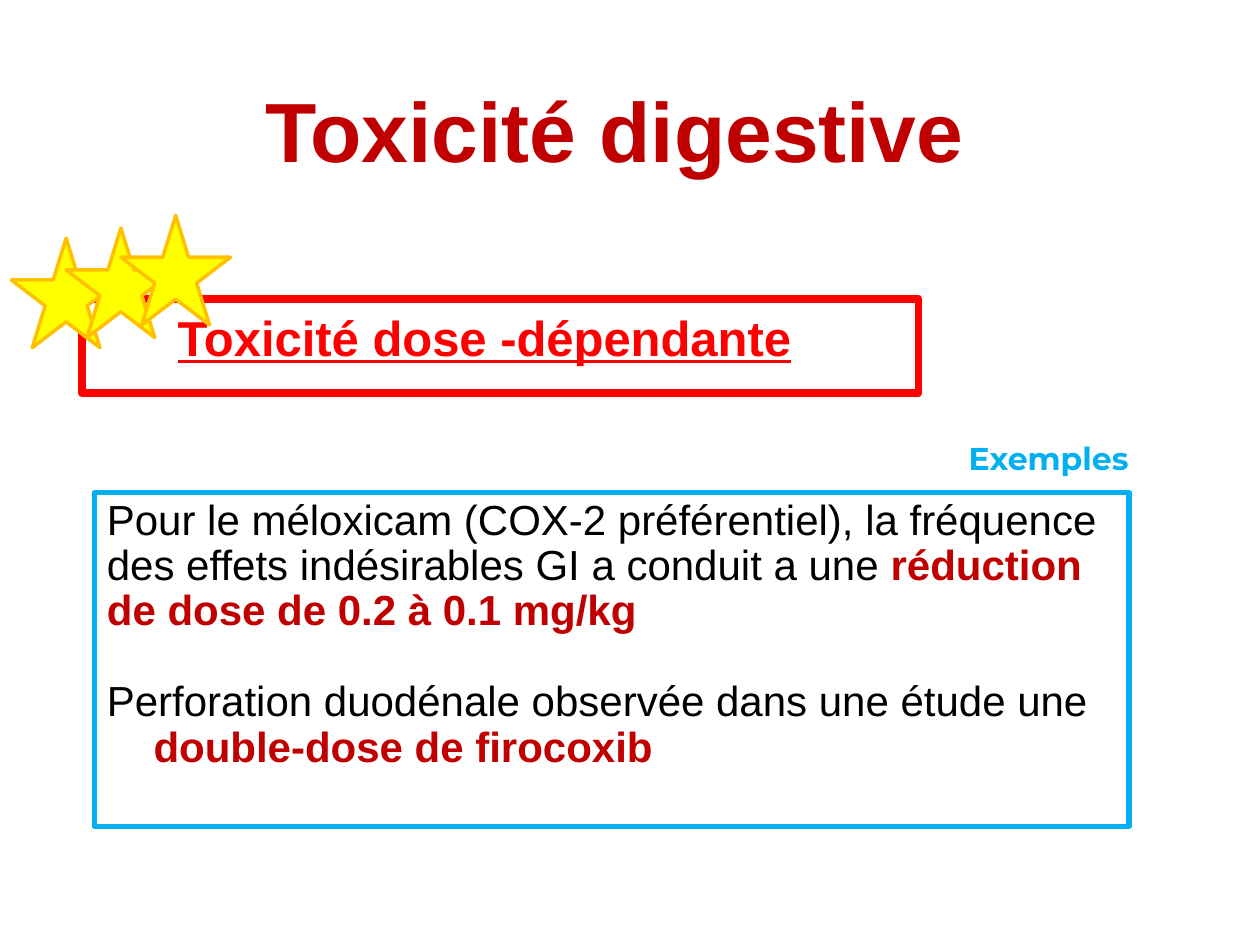
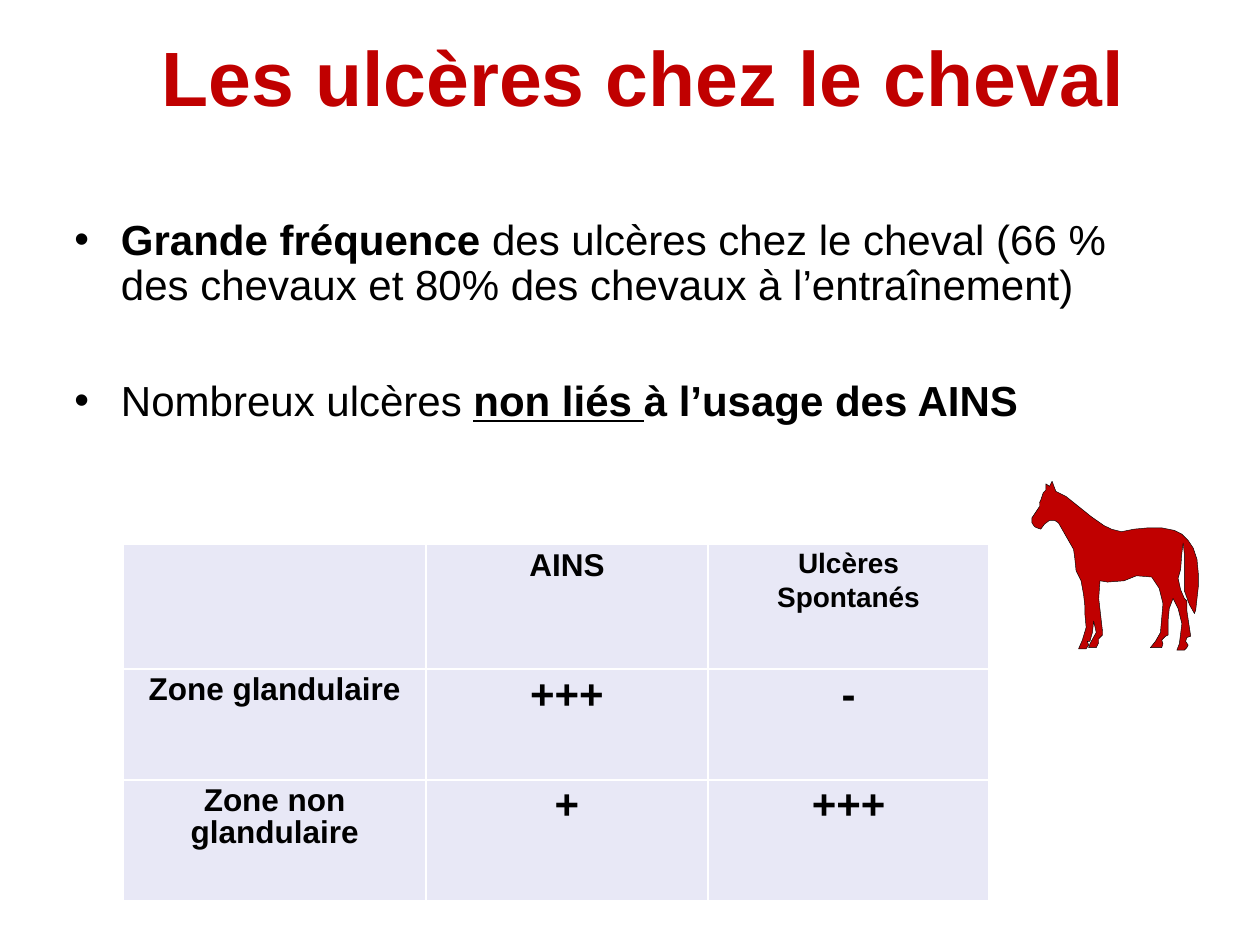
from dataclasses import dataclass

from lxml import etree
from pptx import Presentation
from pptx.dml.color import RGBColor
from pptx.enum.shapes import MSO_SHAPE
from pptx.enum.text import MSO_ANCHOR, MSO_AUTO_SIZE, PP_ALIGN
from pptx.oxml.ns import qn
from pptx.util import Inches, Pt

RECT, STAR = MSO_SHAPE.RECTANGLE, MSO_SHAPE.STAR_5_POINT
LEFT, MID = PP_ALIGN.LEFT, PP_ALIGN.CENTER
TOP, CENTRE = MSO_ANCHOR.TOP, MSO_ANCHOR.MIDDLE
FIXED = MSO_AUTO_SIZE.NONE


@dataclass(frozen=True)
class Theme:
    """Colours, fonts and type sizes shared by the slides."""

    font: str = "Arial"
    accent: str = "Montserrat"
    dark: str = "C00000"
    red: str = "FF0000"
    blue: str = "00B0F0"
    gold: str = "FFC000"
    yellow: str = "FFFF00"
    pale: str = "E8E8F6"
    black: str = "000000"
    white: str = "FFFFFF"
    body: int = 24
    lead: int = 28
    label: int = 18
    small: int = 16
    pitch: float = 0.9
    hang: float = 0.37


T = Theme()
STRONG = {"bold": True, "color": T.dark}

HORSE = [
    (8, 39), (5, 38), (3, 37), (1, 34), (1, 30), (7, 21), (7, 18), (8, 16),
    (9, 13), (10, 10), (12, 8), (12, 3), (15, 5), (17, 1), (20, 9), (28, 13),
    (48, 29), (58, 36), (64, 39), (72, 41), (82, 39), (93, 38), (104, 38),
    (114, 40), (120, 43), (125, 48), (129, 54), (132, 63), (133, 74),
    (133, 85), (131, 103), (130, 106), (126, 99), (122, 88), (122, 73),
    (122, 59), (121, 50), (120, 58), (119, 71), (117, 78), (119, 87),
    (122, 94), (124, 96), (124, 104), (127, 124), (124, 125), (123, 128),
    (125, 131), (124, 133), (122, 135), (116, 135), (118, 130), (120, 114),
    (117, 102), (113, 94), (110, 102), (109, 112), (109, 123), (107, 124),
    (104, 127), (105, 130), (104, 133), (99, 133), (95, 133), (99, 128),
    (103, 121), (105, 98), (102, 86), (96, 77), (84, 76), (74, 80), (61, 81),
    (55, 80), (54, 94), (57, 120), (57, 123), (54, 126), (54, 129), (52, 133),
    (46, 133), (47, 130), (52, 121), (50, 112), (49, 121), (47, 128),
    (45, 128), (46, 131), (44, 134), (38, 134), (41, 127), (44, 117),
    (43, 106), (43, 100), (42, 91), (40, 80), (36, 72), (35, 62), (34, 55),
    (22, 34), (19, 32), (15, 32), (11, 35),
]


def tint(code):
    """Turn a hex code into a colour."""
    return RGBColor.from_string(code)


def place(shape, box):
    """Move and size a shape to a box in inches."""
    shape.left, shape.top, shape.width, shape.height = map(Inches, box)


def style(shape, fill=None, line=None, width=1):
    """Set fill and line of a shape and drop its shadow."""
    shape.shadow.inherit = False
    if fill:
        shape.fill.solid()
        shape.fill.fore_color.rgb = tint(fill)
    else:
        shape.fill.background()
    if line:
        shape.line.color.rgb = tint(line)
        shape.line.width = Pt(width)
    else:
        shape.line.fill.background()


def indent(para, first, hang, bullet):
    """Set the indents of a paragraph and its bullet."""
    props = para._p.get_or_add_pPr()
    props.set("marL", str(Inches(hang)))
    props.set("indent", str(Inches(first)))
    if bullet:
        etree.SubElement(props, qn("a:buFont")).set("typeface", T.font)
        etree.SubElement(props, qn("a:buChar")).set("char", bullet)
    else:
        etree.SubElement(props, qn("a:buNone"))


def write(frame, paras, size=T.body, font=T.font, color=T.black, bold=False,
          align=LEFT, gap=0, hangs=(), bullet=None):
    """Fill a text frame with paragraphs made of (text, format) runs."""
    for i, runs in enumerate(paras):
        para = frame.add_paragraph() if i else frame.paragraphs[0]
        para.alignment = align
        para.line_spacing = T.pitch
        para.space_before = Pt(gap if i else 0)
        hang = T.hang if i in hangs else 0
        indent(para, -hang, hang, bullet)
        for words, extra in runs:
            run = para.add_run()
            run.text = words
            run.font.name = font
            run.font.size = Pt(size)
            run.font.bold = extra.get("bold", bold)
            run.font.underline = extra.get("under", False)
            run.font.color.rgb = tint(extra.get("color", color))


def setup(frame, anchor=TOP, wrap=True):
    """Fix the size, wrap and anchor of a text frame."""
    frame.auto_size = FIXED
    frame.word_wrap = wrap
    frame.vertical_anchor = anchor
    return frame


def start(deck, title, box, size):
    """Add a slide with its title and return it."""
    slide = deck.slides.add_slide(deck.slide_layouts[1])
    head = slide.shapes.title
    place(head, box)
    write(setup(head.text_frame, CENTRE), [[(title, {})]], size=size,
          color=T.dark, bold=True, align=MID)
    return slide


def body(slide, box):
    """Place the white body placeholder and return its frame."""
    shape = slide.placeholders[1]
    place(shape, box)
    shape.fill.solid()
    shape.fill.fore_color.rgb = tint(T.white)
    return setup(shape.text_frame)


def block(slide, kind, box, **look):
    """Add a styled preset shape."""
    shape = slide.shapes.add_shape(kind, *map(Inches, box))
    style(shape, **look)
    return shape


def sample(slide, box):
    """Add the framed examples and their label."""
    x, y, wide, _ = box
    frame = block(slide, RECT, box, line=T.blue, width=3).text_frame
    write(setup(frame), [
        [("Pour le méloxicam (COX-2 préférentiel), la fréquence des effets "
          "indésirables GI a conduit a une ", {}),
         ("réduction de dose de 0.2 à 0.1 mg/kg", STRONG)],
        [("Perforation duodénale observée dans une étude une ", {}),
         ("double-dose de firocoxib", STRONG)],
    ], gap=26, hangs=(1,))
    spot = (x + wide - 1.37, y - 0.44, 1.54, 0.4)
    label = slide.shapes.add_textbox(*map(Inches, spot))
    write(setup(label.text_frame, wrap=False), [[("Exemples", {})]],
          size=T.label, font=T.accent, color=T.blue, bold=True)


def banner(slide, box):
    """Add the red frame with three stars at its corner."""
    x, y, _, _ = box
    block(slide, RECT, box, line=T.red, width=4.5)
    for i, rise in enumerate((0.48, 0.56, 0.66)):
        spot = (x - 0.56 + 0.435 * i, y - rise, 0.87, 0.87)
        block(slide, STAR, spot, fill=T.yellow, line=T.gold, width=2)


def horse(slide, box):
    """Draw the horse outline in a box."""
    x, y, wide, _ = box
    pen = slide.shapes.build_freeform(*HORSE[0], scale=Inches(wide / 133))
    pen.add_line_segments(HORSE[1:], close=True)
    shape = pen.convert_to_shape(Inches(x), Inches(y))
    style(shape, fill=T.dark, line=T.black, width=0.25)


def edge(cell):
    """Draw white borders around a cell."""
    props = cell._tc.get_or_add_tcPr()
    for i, side in enumerate(("lnL", "lnR", "lnT", "lnB")):
        line = etree.Element(qn("a:" + side), w=str(Pt(1)))
        fill = etree.SubElement(line, qn("a:solidFill"))
        etree.SubElement(fill, qn("a:srgbClr")).set("val", T.white)
        props.insert(i, line)


def grid(slide, box, cols, rows, cells):
    """Add the table of (lines, size) cells."""
    table = slide.shapes.add_table(len(rows), len(cols),
                                   *map(Inches, box)).table
    table.first_row = table.horz_banding = False
    for col, wide in zip(table.columns, cols):
        col.width = Inches(wide)
    for row, high, data in zip(table.rows, rows, cells):
        row.height = Inches(high)
        for cell, (lines, size) in zip(row.cells, data):
            cell.fill.solid()
            cell.fill.fore_color.rgb = tint(T.pale)
            edge(cell)
            if lines:
                write(cell.text_frame, [[(line, {})] for line in lines],
                      size=size, bold=True, align=MID, gap=4)


def toxic(deck):
    """Build the slide on digestive toxicity."""
    slide = start(deck, "Toxicité digestive", (0.49, 0.66, 8.78, 0.83), 48)
    frame = body(slide, (0.31, 1.97, 8.28, 1.22))
    frame.margin_left, frame.margin_top = Inches(1.1), Inches(0.52)
    write(frame, [[("Toxicité dose -dépendante", {"under": True})]],
          size=T.lead, color=T.red, bold=True)
    sample(slide, (0.75, 3.91, 8.21, 2.65))
    banner(slide, (0.65, 2.37, 6.64, 0.75))


def ulcer(deck):
    """Build the slide on ulcers in horses."""
    slide = start(deck, "Les ulcères chez le cheval",
                  (1.17, 0.24, 7.87, 0.81), 44)
    write(body(slide, (0.49, 1.69, 8.54, 3.28)), [
        [("Grande fréquence ", {"bold": True}),
         ("des ulcères chez le cheval (66 % des chevaux et 80% des chevaux "
          "à l’entraînement)", {})],
        [("Nombreux ulcères ", {}),
         ("non liés ", {"bold": True, "under": True}),
         ("à l’usage des AINS", {"bold": True})],
    ], gap=40, hangs=(0, 1), bullet="•")
    horse(slide, (8.18, 3.81, 1.33, 1.36))
    grid(slide, (0.98, 4.32, 6.87, 2.82), (2.4, 2.24, 2.23),
         (0.99, 0.88, 0.96), [
        [([], T.label), (["AINS"], T.label),
         (["Ulcères", "Spontanés"], T.small)],
        [(["Zone glandulaire"], T.label), (["+++"], T.body),
         (["-"], T.body)],
        [(["Zone non glandulaire"], T.label), (["+"], T.body),
         (["+++"], T.body)],
    ])


def main():
    """Build and save the deck."""
    deck = Presentation()
    deck.slide_width, deck.slide_height = Inches(10), Inches(7.5)
    toxic(deck)
    ulcer(deck)
    deck.save("out.pptx")


if __name__ == "__main__":
    main()
